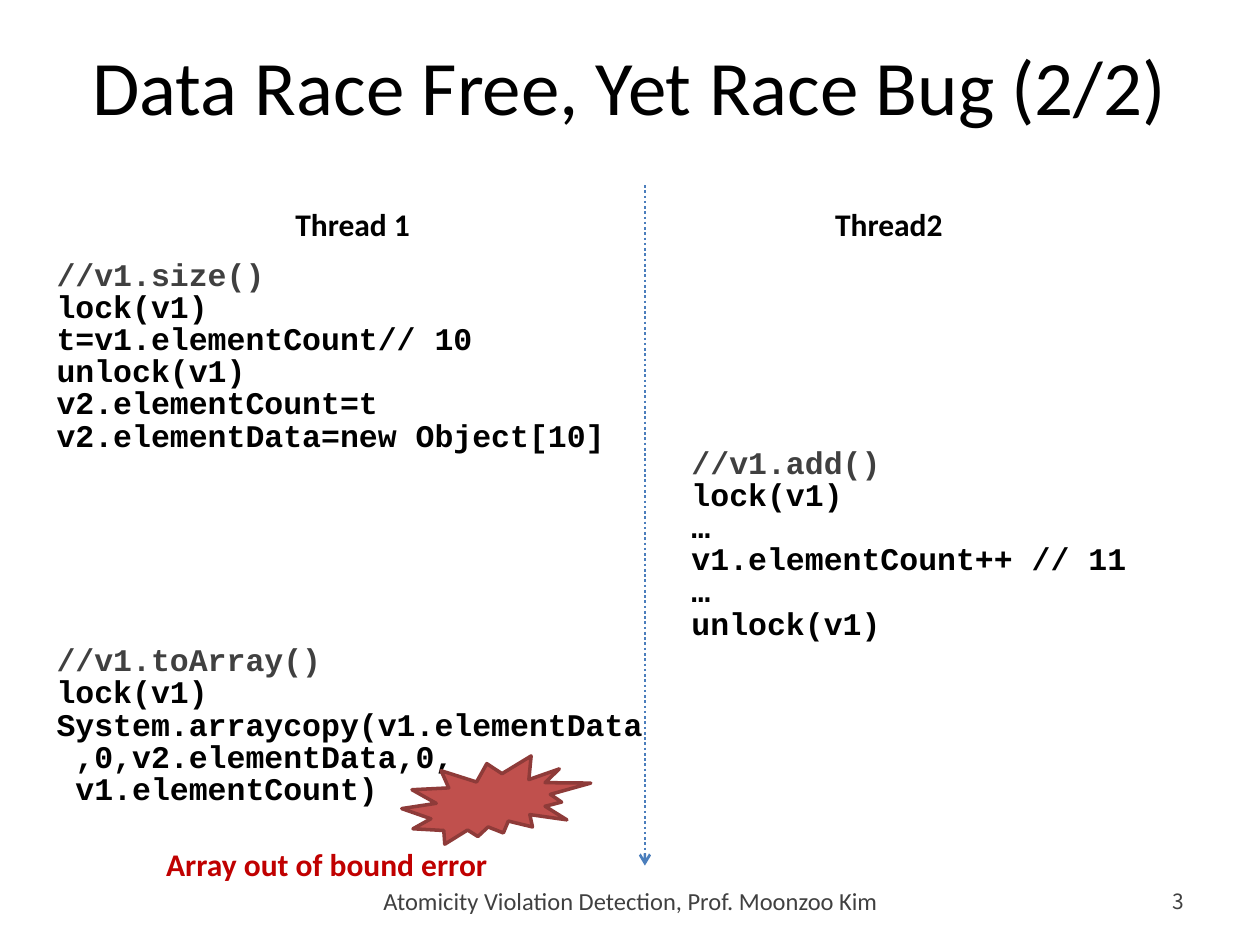
from pptx import Presentation
from pptx.dml.color import RGBColor
from pptx.enum.dml import MSO_LINE
from pptx.enum.shapes import MSO_CONNECTOR, MSO_SHAPE
from pptx.enum.text import MSO_ANCHOR, MSO_AUTO_SIZE, PP_ALIGN
from pptx.oxml.ns import qn
from pptx.util import Cm, Pt
from lxml.etree import SubElement

BLACK, GRAY, RED = "000000", "404040", "C00000"

SIZE_CODE = """//v1.size()
lock(v1)
t=v1.elementCount// 10
unlock(v1)
v2.elementCount=t
v2.elementData=new Object[10]"""

ARRAY_CODE = """//v1.toArray()
lock(v1)
System.arraycopy(v1.elementData\v ,0,v2.elementData,0,\v v1.elementCount)"""

ADD_CODE = """//v1.add()
lock(v1)
…
v1.elementCount++ // 11
…
unlock(v1)"""


def color(hex_value):
    return RGBColor.from_string(hex_value)


def style(paragraph, size, ink, font="Calibri", bold=False, align=PP_ALIGN.LEFT):
    paragraph.alignment = align
    paragraph.font.size = Pt(size)
    paragraph.font.name = font
    paragraph.font.bold = bold
    paragraph.font.color.rgb = color(ink)


def add_text(slide, left, top, width, height, text):
    frame = slide.shapes.add_textbox(Cm(left), Cm(top), Cm(width), Cm(height)).text_frame
    frame.word_wrap = True
    frame.text = text
    return frame


def add_label(slide, left, top, width, text, ink=BLACK, align=PP_ALIGN.CENTER):
    frame = add_text(slide, left, top, width, 1.02, text)
    frame.auto_size = MSO_AUTO_SIZE.SHAPE_TO_FIT_TEXT
    style(frame.paragraphs[0], 18, ink, bold=True, align=align)


def add_code(slide, left, top, width, height, code):
    frame = add_text(slide, left, top, width, height, code)
    frame.auto_size = MSO_AUTO_SIZE.SHAPE_TO_FIT_TEXT
    for paragraph in frame.paragraphs:
        ink = GRAY if paragraph.text.startswith("//") else BLACK
        style(paragraph, 18, ink, "Courier New", bold=True)
        paragraph.line_spacing = 0.85


def add_title(slide, left, top, width, height):
    title = slide.shapes.title
    title.left, title.top, title.width, title.height = map(Cm, (left, top, width, height))
    frame = title.text_frame
    frame.text = "Data Race Free, Yet Race Bug (2/2)"
    frame.vertical_anchor = MSO_ANCHOR.MIDDLE
    style(frame.paragraphs[0], 44, BLACK, align=PP_ALIGN.CENTER)


def add_first_thread(slide, left, top):
    add_label(slide, left, top, 12.8, "Thread 1")
    add_code(slide, left + 0.18, top + 1.12, 12.6, 4.19, SIZE_CODE)
    add_code(slide, left + 0.18, top + 8.89, 12.6, 3.6, ARRAY_CODE)


def add_second_thread(slide, left, top):
    add_label(slide, left, top, 8.46, "Thread2")
    add_code(slide, left, top + 4.91, 9.8, 4.19, ADD_CODE)


def add_error(slide, left, top):
    burst = slide.shapes.add_shape(
        MSO_SHAPE.EXPLOSION2, Cm(left + 5), Cm(top), Cm(3.81), Cm(1.78))
    burst.shadow.inherit = False
    burst.fill.solid()
    burst.fill.fore_color.rgb = color("C0504D")
    burst.line.color.rgb = color("8E3B39")
    burst.line.width = Pt(2)
    add_label(slide, left, top + 1.68, 9.6, "Array out of bound error", RED, PP_ALIGN.LEFT)


def add_time_arrow(slide, left, top, height):
    arrow = slide.shapes.add_connector(
        MSO_CONNECTOR.STRAIGHT, Cm(left), Cm(top), Cm(left), Cm(top + height))
    arrow.line.color.rgb = color("4B7EBC")
    arrow.line.width = Pt(1.5)
    arrow.line.dash_style = MSO_LINE.ROUND_DOT
    properties = arrow._element.spPr
    SubElement(properties.find(qn("a:ln")), qn("a:tailEnd"), type="arrow")
    SubElement(properties, qn("a:effectLst"))


def add_footer(slide, left, top):
    course = add_text(slide, left, top, 17.25, 1.02,
                      "Atomicity Violation Detection, Prof. Moonzoo Kim")
    style(course.paragraphs[0], 14, GRAY, align=PP_ALIGN.CENTER)
    number = add_text(slide, left + 18.62, top, 1.42, 1.02, "3")
    style(number.paragraphs[0], 12, GRAY, "Noto Sans CJK KR", align=PP_ALIGN.RIGHT)
    for frame in (course, number):
        frame.vertical_anchor = MSO_ANCHOR.MIDDLE


def main():
    deck = Presentation()
    deck.slide_width, deck.slide_height = Cm(25.4), Cm(19.05)
    slide = deck.slides.add_slide(deck.slide_layouts[5])
    add_title(slide, 1.27, 0.13, 22.86, 3.17)
    add_footer(slide, 4.09, 17.65)
    add_first_thread(slide, 0.71, 4.01)
    add_second_thread(slide, 13.69, 4.01)
    add_error(slide, 3.1, 15.24)
    add_time_arrow(slide, 13, 3.73, 13.72)
    deck.save("out.pptx")


if __name__ == "__main__":
    main()
